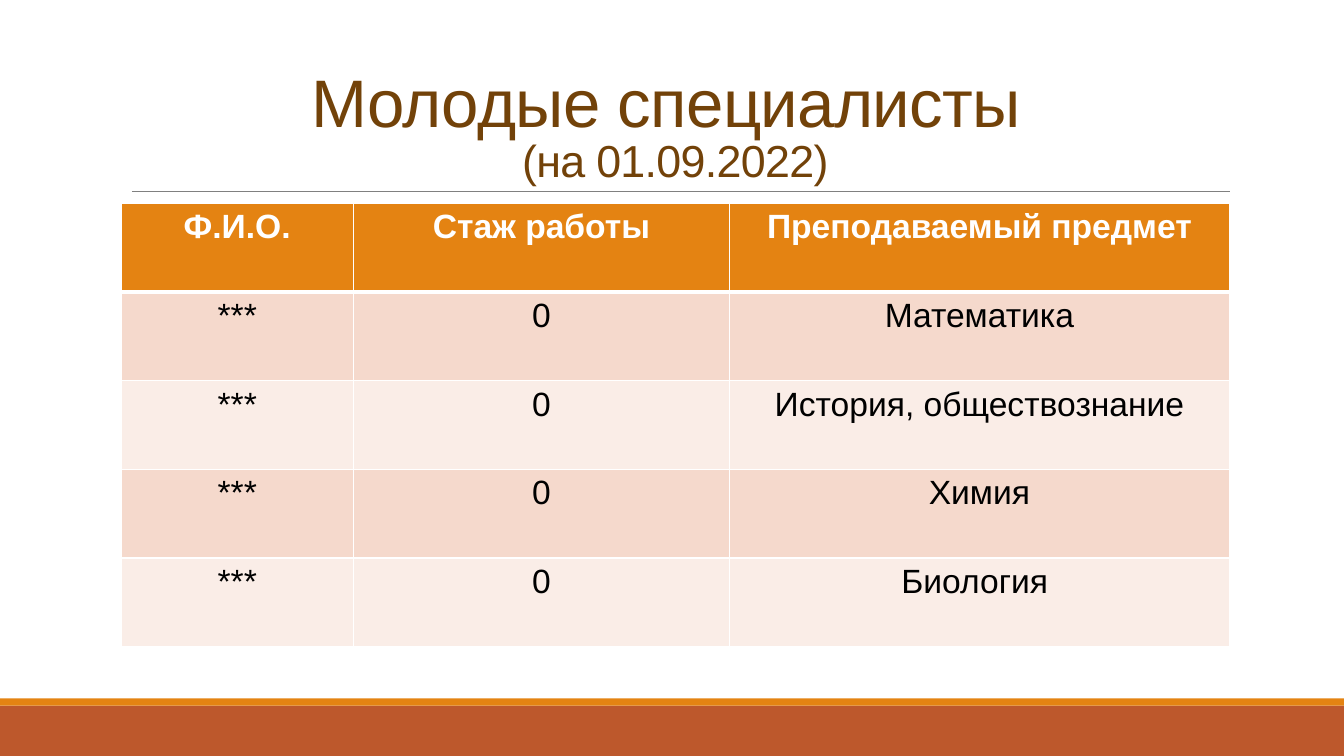
from dataclasses import dataclass

from lxml.etree import SubElement
from pptx import Presentation
from pptx.dml.color import RGBColor
from pptx.enum.shapes import MSO_CONNECTOR as Connector, MSO_SHAPE as Shape
from pptx.enum.text import MSO_ANCHOR as Anchor, PP_ALIGN as Align
from pptx.oxml import parse_xml
from pptx.oxml.ns import nsdecls, qn
from pptx.slide import Slide
from pptx.table import _Cell as Cell
from pptx.util import Pt

FONT = "Arial"
COLORS = {
    "rust": "BD582C",
    "orange": "E48312",
    "brown": "724209",
    "rule": "808080",
    "white": "FFFFFF",
    "black": "000000",
    "band_dark": "F5D9CC",
    "band_light": "FAEDE7",
}
PAGE_WIDTH, PAGE_HEIGHT = 960, 540
COLUMN_WIDTHS = (166.1, 268.6, 357.1)
ROW_HEIGHT = 63.3
HEADER = ("Ф.И.О.", "Стаж работы", "Преподаваемый предмет")
SUBJECTS = ("Математика", "История, обществознание", "Химия", "Биология ")


@dataclass
class Band:
    top: float
    height: float
    color: str


@dataclass
class TextStyle:
    size: float
    color: str
    bold: bool = False
    spacing: float = 0


FOOTER_BANDS = (Band(504, 36, "rust"), Band(498.8, 5.2, "orange"))
TITLE_STYLE = TextStyle(48, "brown", spacing=-0.5)
DATE_STYLE = TextStyle(32, "brown", spacing=-0.5)
HEADER_STYLE = TextStyle(24, "white", bold=True)
BODY_STYLE = TextStyle(24, "black")


def rgb(name: str) -> RGBColor:
    return RGBColor.from_string(COLORS[name])


def add_span(para, text: str, style: TextStyle) -> None:
    span = para.add_run()
    span.text = text
    span.font.name = FONT
    span.font.size = Pt(style.size)
    span.font.bold = style.bold
    span.font.color.rgb = rgb(style.color)
    if style.spacing:
        span.font._element.set("spc", str(round(style.spacing * 100)))


def add_band(page: Slide, band: Band) -> None:
    box = page.shapes.add_shape(
        Shape.RECTANGLE, Pt(0), Pt(band.top), Pt(PAGE_WIDTH), Pt(band.height))
    box.shadow.inherit = False
    box.fill.solid()
    box.fill.fore_color.rgb = rgb(band.color)
    box.line.fill.background()


def add_title_rule(page: Slide) -> None:
    rule = page.shapes.add_connector(
        Connector.STRAIGHT, Pt(94.3), Pt(136.8), Pt(878.7), Pt(136.8))
    rule.line.color.rgb = rgb("rule")
    rule.line.width = Pt(0.5)
    SubElement(rule._element.spPr, qn("a:effectLst"))


def add_title(page: Slide) -> None:
    box = page.shapes.add_textbox(Pt(86.4), Pt(22.3), Pt(792), Pt(114.5))
    frame = box.text_frame
    frame.word_wrap = True
    frame.vertical_anchor = Anchor.BOTTOM
    para = frame.paragraphs[0]
    para.alignment = Align.CENTER
    para.line_spacing = 0.85
    add_span(para, "Молодые специалисты ", TITLE_STYLE)
    para.add_line_break()
    add_span(para, "(на 01.09.2022)", DATE_STYLE)


def set_borders(cell: Cell, bottom: float, top: float) -> None:
    properties = cell._tc.get_or_add_tcPr()
    widths = {"lnL": 1, "lnR": 1, "lnT": top, "lnB": bottom}
    for index, (side, width) in enumerate(widths.items()):
        properties.insert(index, parse_xml(
            f'<a:{side} {nsdecls("a")} w="{Pt(width)}"><a:solidFill>'
            f'<a:srgbClr val="{COLORS["white"]}"/></a:solidFill></a:{side}>'))


def fill_cell(cell: Cell, text: str, fill: str, style: TextStyle) -> None:
    cell.fill.solid()
    cell.fill.fore_color.rgb = rgb(fill)
    para = cell.text_frame.paragraphs[0]
    para.alignment = Align.CENTER
    add_span(para, text, style)


def add_specialists_table(page: Slide) -> None:
    rows = [HEADER] + [("***", "0", subject) for subject in SUBJECTS]
    table = page.shapes.add_table(
        len(rows), len(HEADER), Pt(86.4), Pt(145.4),
        Pt(sum(COLUMN_WIDTHS)), Pt(ROW_HEIGHT * len(rows))).table
    for column, width in zip(table.columns, COLUMN_WIDTHS):
        column.width = Pt(width)
    for row_index, texts in enumerate(rows):
        table.rows[row_index].height = Pt(ROW_HEIGHT)
        if row_index == 0:
            fill, style = "orange", HEADER_STYLE
        else:
            fill = "band_dark" if row_index % 2 else "band_light"
            style = BODY_STYLE
        for column_index, text in enumerate(texts):
            cell = table.cell(row_index, column_index)
            fill_cell(cell, text, fill, style)
            set_borders(cell, bottom=3 if row_index == 0 else 1,
                        top=3 if row_index == 1 else 1)


def main() -> None:
    deck = Presentation()
    deck.slide_width, deck.slide_height = Pt(PAGE_WIDTH), Pt(PAGE_HEIGHT)
    page = deck.slides.add_slide(deck.slide_layouts[6])
    for band in FOOTER_BANDS:
        add_band(page, band)
    add_title_rule(page)
    add_title(page)
    add_specialists_table(page)
    deck.save("out.pptx")


if __name__ == "__main__":
    main()
